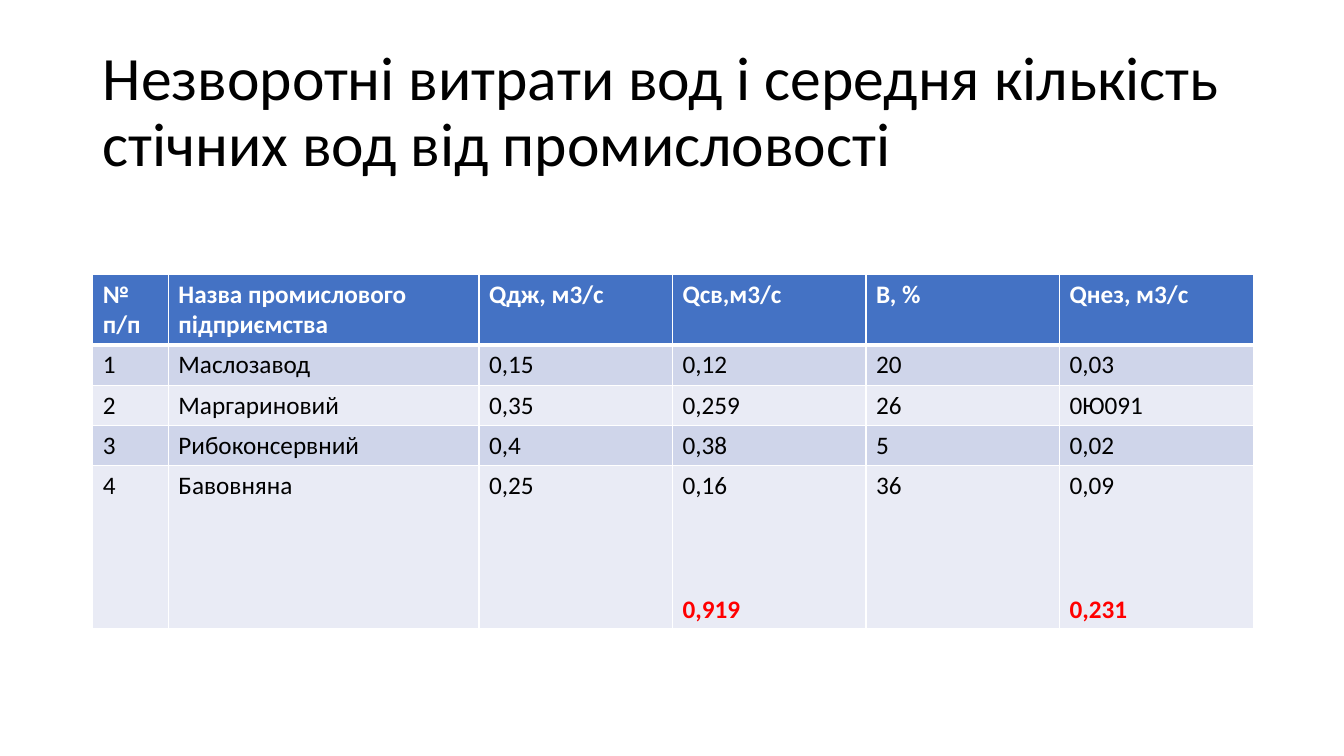
from lxml import etree
from pptx import Presentation
from pptx.dml.color import RGBColor
from pptx.enum.text import MSO_ANCHOR
from pptx.oxml.ns import qn
from pptx.util import Inches, Pt

MIDDLE = MSO_ANCHOR.MIDDLE
FONT = "Calibri"
COLORS = {
    "text": "000000",
    "header": "4472C4",
    "odd_row": "CFD5EA",
    "even_row": "E9EBF5",
    "white": "FFFFFF",
    "total": "FF0000",
}
TITLE = "Незворотні витрати вод і середня кількість стічних вод від промисловості"
ROWS = [
    ["№ п/п", "Назва промислового підприємства", "Qдж, м3/с", "Qсв,м3/с", "B, %", "Qнез, м3/с"],
    ["1", "Маслозавод", "0,15", "0,12", "20", "0,03"],
    ["2", "Маргариновий", "0,35", "0,259", "26", "0Ю091"],
    ["3", "Рибоконсервний", "0,4", "0,38", "5", "0,02"],
    ["4", "Бавовняна", "0,25", "0,16", "36", "0,09"],
]
TOTALS = {3: "0,919", 5: "0,231"}
COLUMN_WIDTHS = [0.75, 3.08] + [1.92] * 4
ROW_HEIGHTS = [0.7] + [0.4] * 3 + [1.6]
TOTAL_GAP = 66


def format_paragraph(paragraph, size, color, bold=False):
    """Apply the font, size, colour and weight to every run of a paragraph."""
    for run in paragraph.runs:
        run.font.name = FONT
        run.font.size = Pt(size)
        run.font.bold = bold
        run.font.color.rgb = RGBColor.from_string(COLORS[color])


def set_borders(cell, top, bottom):
    """Draw white cell borders with the given top and bottom widths in points."""
    properties = cell._tc.get_or_add_tcPr()
    for side, width in (("L", 1), ("R", 1), ("T", top), ("B", bottom)):
        line = etree.SubElement(properties, qn(f"a:ln{side}"), w=str(Pt(width)))
        fill = etree.SubElement(line, qn("a:solidFill"))
        etree.SubElement(fill, qn("a:srgbClr"), val=COLORS["white"])


def add_title(slide, left, top, width, height):
    """Add the slide title, centred vertically in its box."""
    box = slide.shapes.add_textbox(Inches(left), Inches(top), Inches(width), Inches(height))
    frame = box.text_frame
    frame.word_wrap = True
    frame.vertical_anchor = MIDDLE
    frame.text = TITLE
    paragraph = frame.paragraphs[0]
    paragraph.line_spacing = 0.9
    format_paragraph(paragraph, 44, "text")


def fill_cell(cell, text, row_index):
    """Write one table cell with the fill and borders of its row."""
    is_header = row_index == 0
    cell.text_frame.text = text
    format_paragraph(cell.text_frame.paragraphs[0], 18, "white" if is_header else "text", is_header)
    set_borders(cell, 3 if row_index == 1 else 1, 3 if is_header else 1)
    fill_name = "header" if is_header else "odd_row" if row_index % 2 else "even_row"
    cell.fill.solid()
    cell.fill.fore_color.rgb = RGBColor.from_string(COLORS[fill_name])


def add_total(cell, text):
    """Add a red total below the value of a cell."""
    paragraph = cell.text_frame.add_paragraph()
    paragraph.text = text
    paragraph.space_before = Pt(TOTAL_GAP)
    format_paragraph(paragraph, 18, "total", True)


def add_water_table(slide, left, top, width, height):
    """Add the table of water use by enterprise."""
    frame = slide.shapes.add_table(
        len(ROWS), len(COLUMN_WIDTHS), Inches(left), Inches(top), Inches(width), Inches(height)
    )
    table = frame.table
    for column, column_width in zip(table.columns, COLUMN_WIDTHS):
        column.width = Inches(column_width)
    for row, row_height in zip(table.rows, ROW_HEIGHTS):
        row.height = Inches(row_height)
    for row_index, texts in enumerate(ROWS):
        for column_index, text in enumerate(texts):
            fill_cell(table.cell(row_index, column_index), text, row_index)
    for column_index, total in TOTALS.items():
        add_total(table.cell(len(ROWS) - 1, column_index), total)


def main():
    """Build and save the presentation."""
    presentation = Presentation()
    presentation.slide_width = Inches(13.33)
    presentation.slide_height = Inches(7.5)
    slide = presentation.slides.add_slide(presentation.slide_layouts[6])
    add_title(slide, 0.92, 0.4, 11.5, 1.45)
    add_water_table(slide, 0.92, 2.72, sum(COLUMN_WIDTHS), sum(ROW_HEIGHTS))
    presentation.save("out.pptx")


if __name__ == "__main__":
    main()
